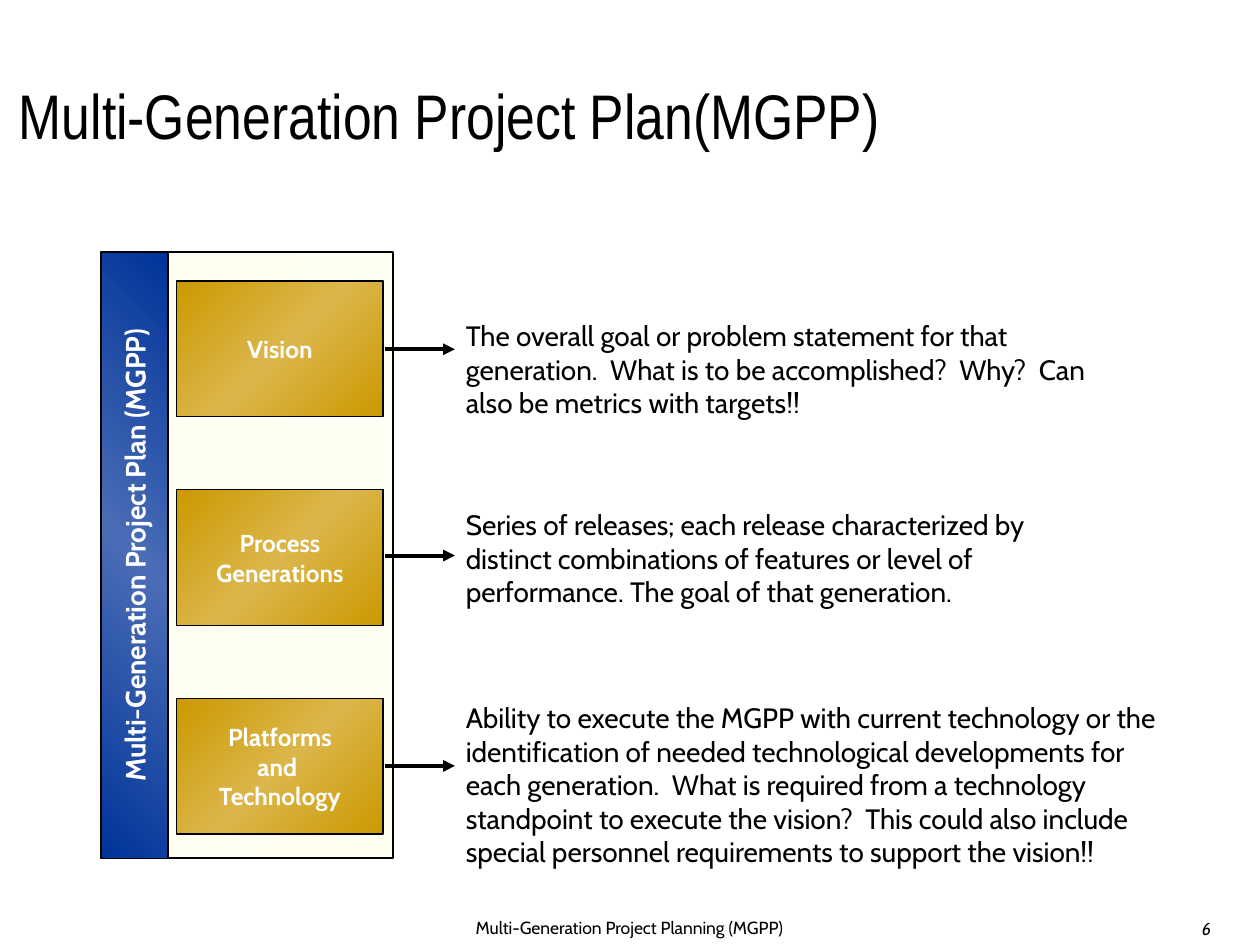
from copy import deepcopy

from pptx import Presentation
from pptx.dml.color import RGBColor
from pptx.enum.shapes import MSO_CONNECTOR, MSO_SHAPE
from pptx.enum.text import MSO_ANCHOR, PP_ALIGN
from pptx.oxml.ns import qn
from pptx.util import Cm, Pt
from lxml import etree

RECT = MSO_SHAPE.RECTANGLE
LINE = MSO_CONNECTOR.STRAIGHT
TOP, MID, LOW = MSO_ANCHOR.TOP, MSO_ANCHOR.MIDDLE, MSO_ANCHOR.BOTTOM
LEFT, CENTER = PP_ALIGN.LEFT, PP_ALIGN.CENTER

BLACK = RGBColor(0x00, 0x00, 0x00)
WHITE = RGBColor(0xFF, 0xFF, 0xFF)
CREAM = RGBColor(0xFF, 0xFF, 0xEF)
PALE = RGBColor(0xFF, 0xFF, 0xF4)
GOLD = RGBColor(0xCC, 0x99, 0x00)
SAND = RGBColor(0xDB, 0xB6, 0x4B)
BLUE = RGBColor(0x00, 0x33, 0x99)
MIST = RGBColor(0x4A, 0x6D, 0xB5)


def add_box(x, y, w, h, edge, glow, text="", size=14):
    """Outlined rectangle with a diagonal sheen and centred white text."""
    box = slide.shapes.add_shape(RECT, Cm(x), Cm(y), Cm(w), Cm(h))
    box.shadow.inherit = False
    box.line.color.rgb = BLACK
    box.line.width = Pt(1)
    box.fill.gradient()
    box.fill.gradient_angle = 315
    first, last = box.fill.gradient_stops
    first.color.rgb = glow
    first.position = 0.5
    last.color.rgb = edge
    last.position = 1
    stops = box.fill._fill._gradFill.find(qn("a:gsLst"))
    start = deepcopy(stops[1])
    start.set("pos", "0")
    stops.insert(0, start)
    if text:
        fill_text(box.text_frame, text, size, WHITE, CENTER, MID, 0.03)
        box.text_frame.paragraphs[0].font.bold = True
    return box


def fill_text(frame, text, size, color=BLACK, align=LEFT, anchor=TOP, pad=None):
    """Put one paragraph in a frame and return it."""
    frame.word_wrap = True
    frame.vertical_anchor = anchor
    if pad is not None:
        frame.margin_left = frame.margin_right = Cm(pad)
        frame.margin_top = frame.margin_bottom = Cm(pad)
    para = frame.paragraphs[0]
    para.text = text
    para.alignment = align
    para.font.name = "Cabin"
    para.font.size = Pt(size)
    para.font.color.rgb = color
    return para


deck = Presentation()
deck.slide_width, deck.slide_height = Cm(25.4), Cm(19.05)
slide = deck.slides.add_slide(deck.slide_layouts[6])

# Title
title = slide.shapes.add_textbox(Cm(0.13), Cm(0.03), Cm(21.11), Cm(3.18))
para = fill_text(title.text_frame, "Multi-Generation Project Plan(MGPP)", 36, anchor=LOW)
para.font.name = "Arial Narrow"
para.line_spacing = 0.9

# Panel and its upright label
add_box(3.35, 5.08, 4.57, 12.22, CREAM, PALE)
label = add_box(-3.4, 10.52, 12.22, 1.35, BLUE, MIST,
                "Multi-Generation Project Plan (MGPP)", 16)
label.rotation = 270

# Rows: name, arrow height, text top, width and height, text
rows = [
    ("Vision", 7.04, 6.3, 13.39, 2.29,
     "The overall goal or problem statement for that generation.  What is to "
     "be accomplished?  Why?  Can also be metrics with targets!!"),
    ("Process Generations", 11.2, 10.11, 13, 2.29,
     "Series of releases; each release characterized by distinct combinations "
     "of features or level of performance. The goal of that generation."),
    ("Platforms\vand \vTechnology", 15.44, 14, 14.99, 3.66,
     "Ability to execute the MGPP with current technology or the "
     "identification of needed technological developments for each "
     "generation.  What is required from a technology standpoint to execute "
     "the vision?  This could also include special personnel requirements to "
     "support the vision!!"),
]
for i, (name, mid, top, width, height, text) in enumerate(rows):
    add_box(3.56, 5.66 + 4.21 * i, 4.17, 2.74, GOLD, SAND, name)

    note = slide.shapes.add_textbox(Cm(9.14), Cm(top), Cm(width), Cm(height))
    fill_text(note.text_frame, text, 16)

    arrow = slide.shapes.add_connector(LINE, Cm(7.77), Cm(mid), Cm(9.17), Cm(mid))
    arrow.line.color.rgb = BLACK
    arrow.line.width = Pt(2.25)
    etree.SubElement(arrow.line._get_or_add_ln(), qn("a:tailEnd"), type="triangle")
    etree.SubElement(arrow._element.spPr, qn("a:effectLst"))

# Footer and page number
foot = slide.shapes.add_textbox(Cm(4.11), Cm(18.36), Cm(17.15), Cm(0.69))
fill_text(foot.text_frame, "Multi-Generation Project Planning (MGPP)", 10, align=CENTER)
page = slide.shapes.add_textbox(Cm(23.98), Cm(18.42), Cm(1.04), Cm(0.63))
fill_text(page.text_frame, "6", 10, anchor=LOW).font.italic = True

deck.save("out.pptx")
